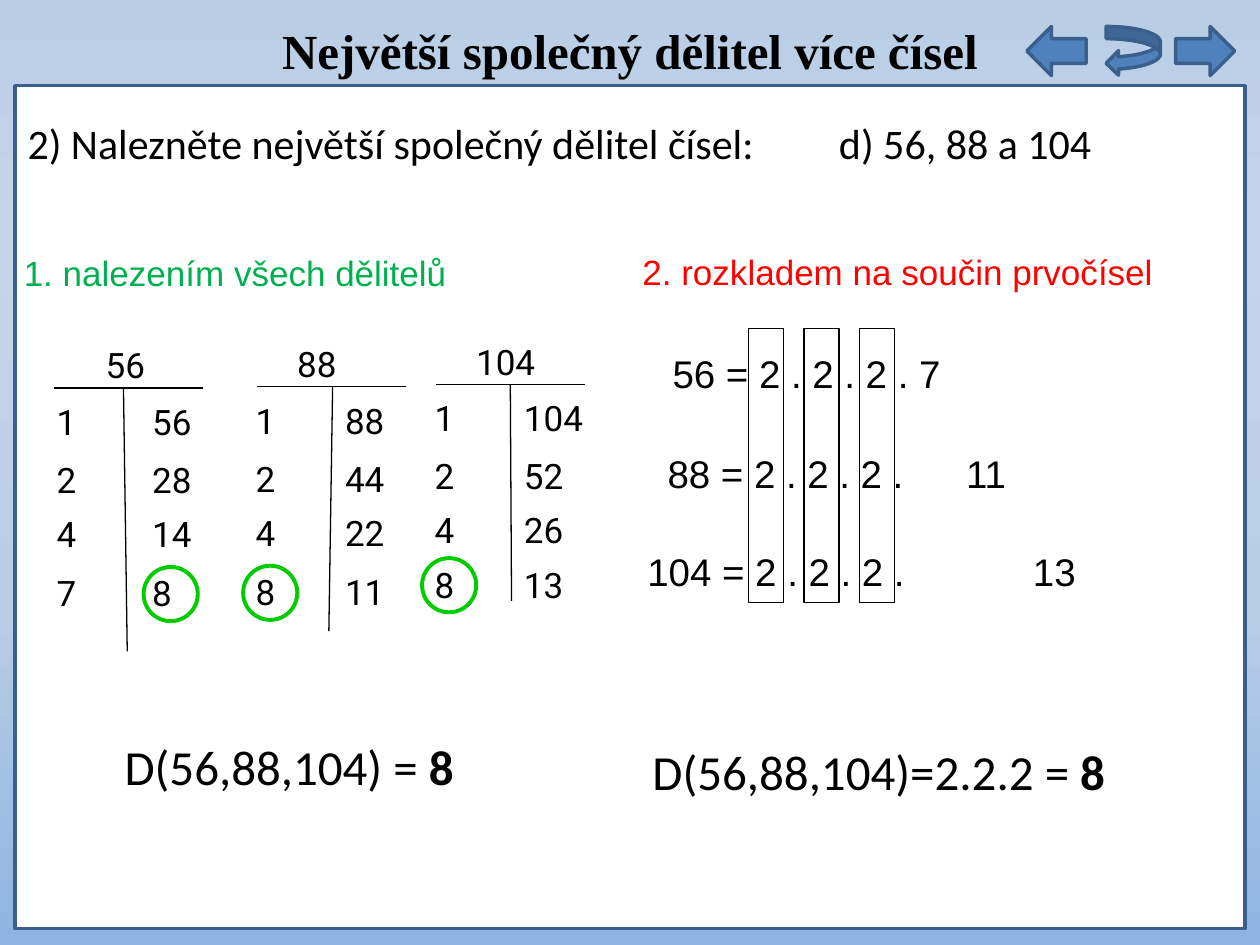
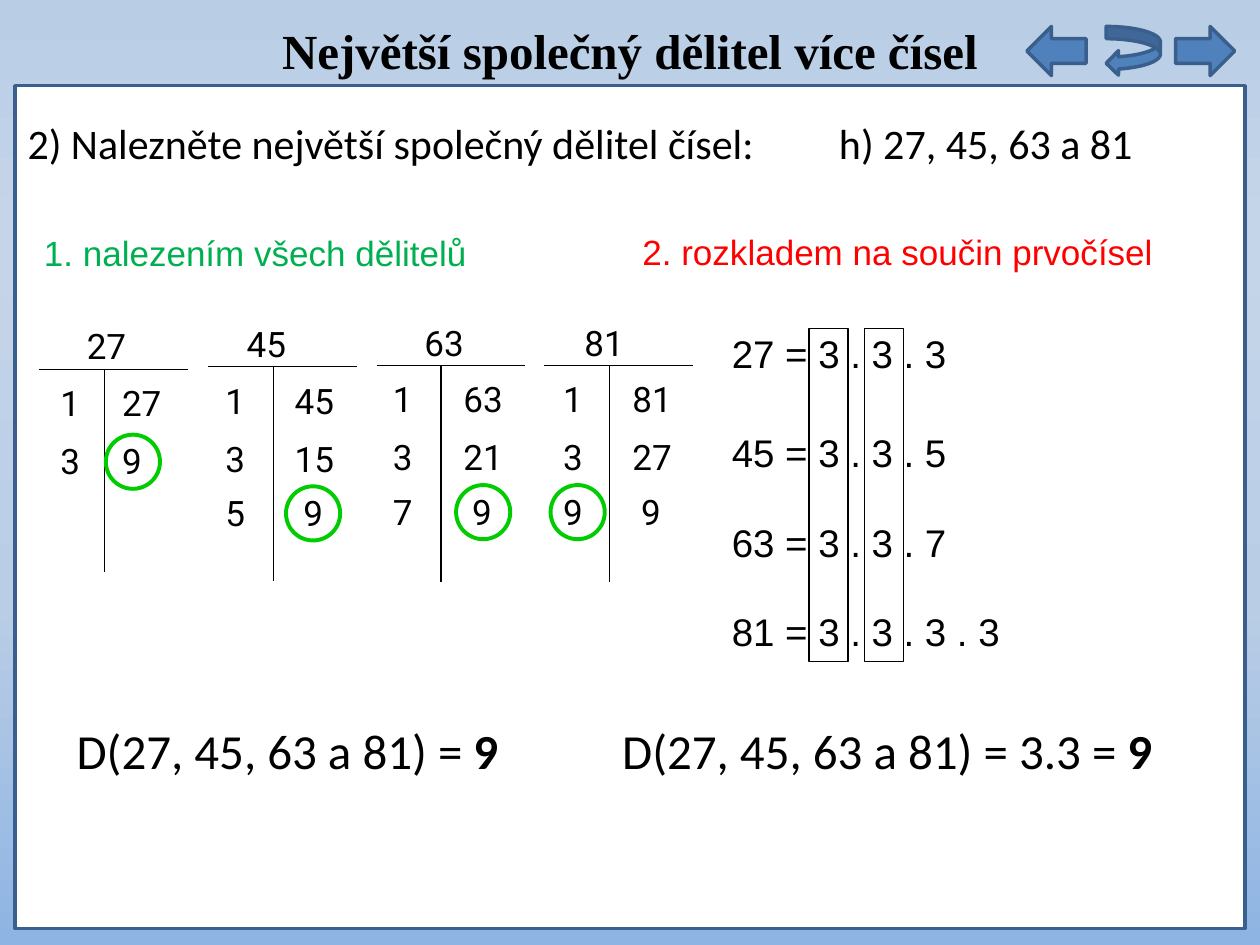
"""Build two slides on the greatest common divisor of several numbers."""
from dataclasses import dataclass

import lxml.etree
import pptx
import pptx.dml.color
import pptx.enum.shapes
import pptx.enum.text
import pptx.oxml.ns
import pptx.util

Inches = pptx.util.Inches
Pt = pptx.util.Pt
qn = pptx.oxml.ns.qn
SHAPE = pptx.enum.shapes.MSO_SHAPE
ALIGN = pptx.enum.text.PP_ALIGN
COLORS = {
    "ink": "000000", "paper": "FFFFFF", "edge": "3A5F8C", "arrow": "4F81BD",
    "green": "00B050", "red": "FF0000", "ring": "00CC00",
}
SKY = ((0, "B9CDE5"), (25, "C5D5E9"), (64, "B9CDE5"), (100, "8EB4E3"))
ROW_GAPS = (0.05, 0.51, 0.94)


@dataclass
class Font:
    name: str
    size: int
    color: str = "ink"
    bold: bool = False


@dataclass
class Tree:
    num: str
    x: float
    y: float
    head: float
    left: float
    right: float
    stem: float
    foot: tuple[float, float]
    ring: float
    rows: list[tuple[str, str]]
    low: float = 1.41


@dataclass
class Sum:
    x: float
    y: float
    text: str
    tab: float = 0


@dataclass
class Answer:
    x: float
    y: float
    width: float
    lead: str
    value: str


@dataclass
class Bars:
    x: float
    count: int
    width: float
    height: float


@dataclass
class Page:
    task: str
    head: tuple[float, float]
    trees: list[Tree]
    sums: list[Sum]
    bars: Bars
    answers: list[Answer]


TITLE = Font("Times New Roman", 28, bold=True)
TASK = Font("Calibri", 24)
CELL = Font("Roboto", 20)
SUM = Font("Arial", 22)
ANSWER = Font("Calibri", 28)
BOLD = Font("Calibri", 28, bold=True)

PAGES = [
    Page(
        "d) 56, 88 a 104", (0.09, 1.95),
        [
            Tree("56", 0.43, 3.08, 0.74, 0.35, 1.11, 0.98, (1.01, 5.17), 1.14,
                 [("1", "56"), ("2", "28"), ("4", "14"), ("7", "8")]),
            Tree("88", 2.04, 3.07, 2.26, 1.93, 2.64, 2.64, (2.61, 5.01), 1.93,
                 [("1", "88"), ("2", "44"), ("4", "22"), ("8", "11")]),
            Tree("104", 3.46, 3.05, 3.68, 3.35, 4.06, 4.05, (4.06, 4.77), 3.35,
                 [("1", "104"), ("2", "52"), ("4", "26"), ("8", "13")], 1.37),
        ],
        [
            Sum(5.24, 2.73, "56 = 2 . 2 . 2 . 7"),
            Sum(5.2, 3.52, "88 = 2 . 2 . 2 .\t11", 2.37),
            Sum(5.04, 4.3, "104 = 2 . 2 . 2 .\t13", 3.06),
        ],
        Bars(5.94, 3, 0.28, 2.17),
        [Answer(0.89, 5.68, 3.78, "D(56,88,104) = ", "8"),
         Answer(5.08, 5.72, 4.71, "D(56,88,104)=2.2.2 = ", "8")],
    ),
    Page(
        "h) 27, 45, 63 a 81", (0.25, 1.79),
        [
            Tree("27", 0.31, 2.93, 0.59, 0.38, 0.87, 0.83, (0.83, 4.54), 0.84,
                 [("1", "27"), ("3", "9")]),
            Tree("45", 1.65, 2.91, 1.86, 1.69, 2.24, 2.17, (2.17, 4.61), 2.27,
                 [("1", "45"), ("3", "15"), ("5", " 9")]),
            Tree("63", 2.99, 2.9, 3.27, 3.02, 3.58, 3.5, (3.5, 4.62), 3.62,
                 [("1", "63"), ("3", "21"), ("7", " 9")]),
            Tree("81", 4.32, 2.9, 4.54, 4.37, 4.92, 4.84, (4.84, 4.62), 4.37,
                 [("1", "81"), ("3", "27"), ("9", " 9")]),
        ],
        [
            Sum(5.71, 2.57, "27 = 3 . 3 . 3"),
            Sum(5.71, 3.36, "45 = 3 . 3 . 5"),
            Sum(5.71, 4.07, "63 = 3 . 3 . 7"),
            Sum(5.71, 4.78, "81 = 3 . 3 . 3 . 3"),
        ],
        Bars(6.42, 2, 0.31, 2.64),
        [Answer(0.51, 5.56, 4.02, "D(27, 45, 63 a 81) = ", "9"),
         Answer(4.84, 5.56, 5.04, "D(27, 45, 63 a 81) = 3.3 = ", "9")],
    ),
]


def rgb(name: str) -> pptx.dml.color.RGBColor:
    return pptx.dml.color.RGBColor.from_string(COLORS[name])


def add_text(slide, x: float, y: float, width: float, height: float,
             runs: list[tuple[str, Font]], align=ALIGN.LEFT,
             tab: float = 0, fit: bool = True) -> None:
    box = slide.shapes.add_textbox(
        Inches(x), Inches(y), Inches(width), Inches(height))
    frame = box.text_frame
    frame.word_wrap = True
    if fit:
        frame.auto_size = pptx.enum.text.MSO_AUTO_SIZE.SHAPE_TO_FIT_TEXT
    else:
        frame.vertical_anchor = pptx.enum.text.MSO_ANCHOR.MIDDLE
    para = frame.paragraphs[0]
    para.alignment = align
    if tab:
        props = para._p.get_or_add_pPr()
        stops = lxml.etree.SubElement(props, qn("a:tabLst"))
        lxml.etree.SubElement(
            stops, qn("a:tab"), pos=str(int(Inches(tab))), algn="l")
    for text, font in runs:
        run = para.add_run()
        run.text = text
        run.font.name = font.name
        run.font.size = Pt(font.size)
        run.font.bold = font.bold
        run.font.color.rgb = rgb(font.color)


def add_form(slide, kind, x: float, y: float, width: float, height: float,
             line: str, weight: float, fill: str = "") -> None:
    form = slide.shapes.add_shape(
        kind, Inches(x), Inches(y), Inches(width), Inches(height))
    form.shadow.inherit = False
    if fill:
        form.fill.solid()
        form.fill.fore_color.rgb = rgb(fill)
    else:
        form.fill.background()
    form.line.color.rgb = rgb(line)
    form.line.width = Pt(weight)


def add_line(slide, x: float, y: float, to_x: float, to_y: float) -> None:
    line = slide.shapes.add_connector(
        pptx.enum.shapes.MSO_CONNECTOR.STRAIGHT,
        Inches(x), Inches(y), Inches(to_x), Inches(to_y))
    line.line.color.rgb = rgb("ink")
    line.line.width = Pt(0.75)
    lxml.etree.SubElement(line._element.spPr, qn("a:effectLst"))


def paint_sky(slide) -> None:
    fill = slide.background.fill
    fill.gradient()
    fill.gradient_angle = 270
    stops = slide.element.find(".//" + qn("a:gsLst"))
    for stop in list(stops):
        stops.remove(stop)
    for place, color in SKY:
        stop = lxml.etree.SubElement(stops, qn("a:gs"), pos=str(place * 1000))
        lxml.etree.SubElement(stop, qn("a:srgbClr"), val=color)


def draw_frame(slide) -> None:
    paint_sky(slide)
    add_form(slide, SHAPE.RECTANGLE, 0.12, 0.68, 9.76, 6.69, "edge", 2, "paper")
    for kind, x, width in ((SHAPE.LEFT_ARROW, 8.15, 0.47),
                           (SHAPE.CURVED_LEFT_ARROW, 8.78, 0.43),
                           (SHAPE.RIGHT_ARROW, 9.33, 0.47)):
        add_form(slide, kind, x, 0.21, width, 0.39, "edge", 2, "arrow")
    add_text(slide, 0.12, 0.11, 9.76, 0.57,
             [("Největší společný dělitel více čísel", TITLE)], ALIGN.CENTER)


def draw_tree(slide, tree: Tree) -> None:
    add_line(slide, tree.x, tree.y, tree.x + 1.18, tree.y)
    add_line(slide, tree.stem, tree.y, *tree.foot)
    cells = [(tree.head, tree.y - 0.4, tree.num)]
    for gap, (left, right) in zip((*ROW_GAPS, tree.low), tree.rows):
        cells += [(tree.left, tree.y + gap, left),
                  (tree.right, tree.y + gap, right)]
    for x, y, text in cells:
        add_text(slide, x, y, 0.71, 0.44, [(text, CELL)])
    add_form(slide, SHAPE.OVAL, tree.ring, cells[-1][1] + 0.01, 0.43, 0.43,
             "ring", 2.25)


def draw_page(slide, page: Page) -> None:
    draw_frame(slide)
    task = f"2) Nalezněte největší společný dělitel čísel:\t{page.task}"
    add_text(slide, 0.12, 0.88, 9.92, 0.51, [(task, TASK)], tab=6.44)
    x, y = page.head
    add_text(slide, x, y, 4.98, 0.44,
             [("1. nalezením všech dělitelů", Font("Arial", 20, "green"))])
    add_text(slide, 5, y - 0.01, 4.78, 0.44,
             [("2. rozkladem na součin prvočísel", Font("Arial", 20, "red"))])
    for tree in page.trees:
        draw_tree(slide, tree)
    for item in page.sums:
        add_text(slide, item.x, item.y, 4.1, 0.47, [(item.text, SUM)],
                 tab=item.tab)
    bars = page.bars
    for i in range(bars.count):
        add_form(slide, SHAPE.RECTANGLE, bars.x + 0.44 * i, 2.61,
                 bars.width, bars.height, "ink", 0.75)
    for item in page.answers:
        add_text(slide, item.x, item.y, item.width, 0.79,
                 [(item.lead, ANSWER), (item.value, BOLD)], fit=False)


def main() -> None:
    deck = pptx.Presentation()
    deck.slide_width, deck.slide_height = Inches(10), Inches(7.5)
    for page in PAGES:
        draw_page(deck.slides.add_slide(deck.slide_layouts[6]), page)
    deck.save("out.pptx")


if __name__ == "__main__":
    main()
